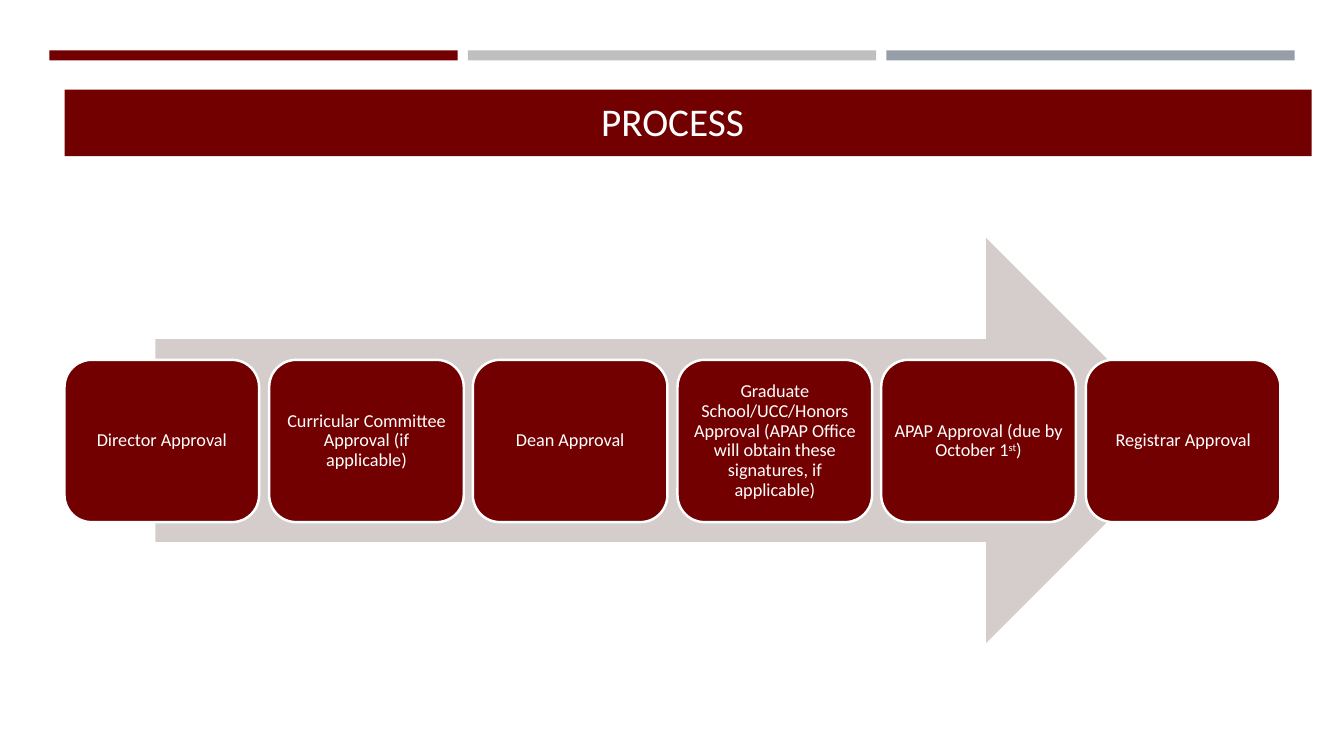
from pptx import Presentation
from pptx import util as u
from pptx.dml.color import RGBColor
from pptx.enum import shapes, text

PX = u.Inches(1) // 100
MAROON, WHITE, SILVER, SLATE, TAUPE = "720000", "FFFFFF", "BFBFBF", "969FA7", "D5CCCC"


def rgb(code):
    return RGBColor.from_string(code)


class ProcessSlide:
    """Draws the parts of one slide in a shared style, measured in px of 1/100 inch."""

    font = "Calibri"

    def __init__(self, deck):
        self.slide = deck.slides.add_slide(deck.slide_layouts[5])

    def block(self, kind, left, top, width, height, fill, outline=None):
        block = self.slide.shapes.add_shape(
            kind, left * PX, top * PX, width * PX, height * PX)
        block.shadow.inherit = False
        block.fill.solid()
        block.fill.fore_color.rgb = rgb(fill)
        if outline:
            block.line.color.rgb = rgb(outline)
            block.line.width = u.Pt(1.75)
        else:
            block.line.fill.background()
        return block

    def bar(self, left, top, width, height, fill):
        return self.block(shapes.MSO_SHAPE.RECTANGLE, left, top, width, height, fill)

    def style(self, paragraph, size):
        paragraph.alignment = text.PP_ALIGN.CENTER
        for run in paragraph.runs:
            run.font.name = self.font
            run.font.size = u.Pt(size)
            run.font.color.rgb = rgb(WHITE)

    def title(self, wording, left, top, width, height):
        heading = self.slide.shapes.title
        heading.left, heading.top = left * PX, top * PX
        heading.width, heading.height = width * PX, height * PX
        frame = heading.text_frame
        frame.text = wording
        frame.word_wrap = True
        frame.auto_size = text.MSO_AUTO_SIZE.NONE
        frame.vertical_anchor = text.MSO_ANCHOR.BOTTOM
        self.style(frame.paragraphs[0], 28)
        self.slide.shapes.element.append(heading.element)

    def step(self, wording, left, top, width, height):
        card = self.block(shapes.MSO_SHAPE.ROUNDED_RECTANGLE,
                          left, top, width, height, MAROON, WHITE)
        frame = card.text_frame
        frame.word_wrap = True
        frame.vertical_anchor = text.MSO_ANCHOR.MIDDLE
        frame.margin_left = frame.margin_right = 5 * PX
        frame.margin_top = frame.margin_bottom = 5 * PX
        label = frame.paragraphs[0]
        label.line_spacing = 0.9
        for position, part in enumerate(wording.split("^")):
            run = label.add_run()
            run.text = part
            if position % 2:
                run.font._element.set("baseline", "30000")
        self.style(label, 13)


def main():
    deck = Presentation()
    deck.slide_width, deck.slide_height = 1333 * PX, 750 * PX
    process = ProcessSlide(deck)

    for column, fill in enumerate((MAROON, SILVER, SLATE)):
        process.bar(49 + 415 * column, 50, 405, 10, fill)
    process.bar(64, 89, 1237, 66, MAROON)
    process.title("PROCESS", 64, 89, 1206, 59)

    process.block(shapes.MSO_SHAPE.RIGHT_ARROW, 154, 236, 1025, 402, TAUPE)
    approvals = (
        "Director Approval",
        "Curricular Committee Approval (if applicable)",
        "Dean Approval",
        "Graduate School/UCC/Honors Approval (APAP Office will obtain "
        "these signatures, if applicable)",
        "APAP Approval (due by October 1^st^)",
        "Registrar Approval",
    )
    first, last = 64, 1077
    for order, approval in enumerate(approvals):
        left = first + round((last - first) * order / (len(approvals) - 1))
        process.step(approval, left, 357, 193, 161)

    deck.save("out.pptx")


if __name__ == "__main__":
    main()
